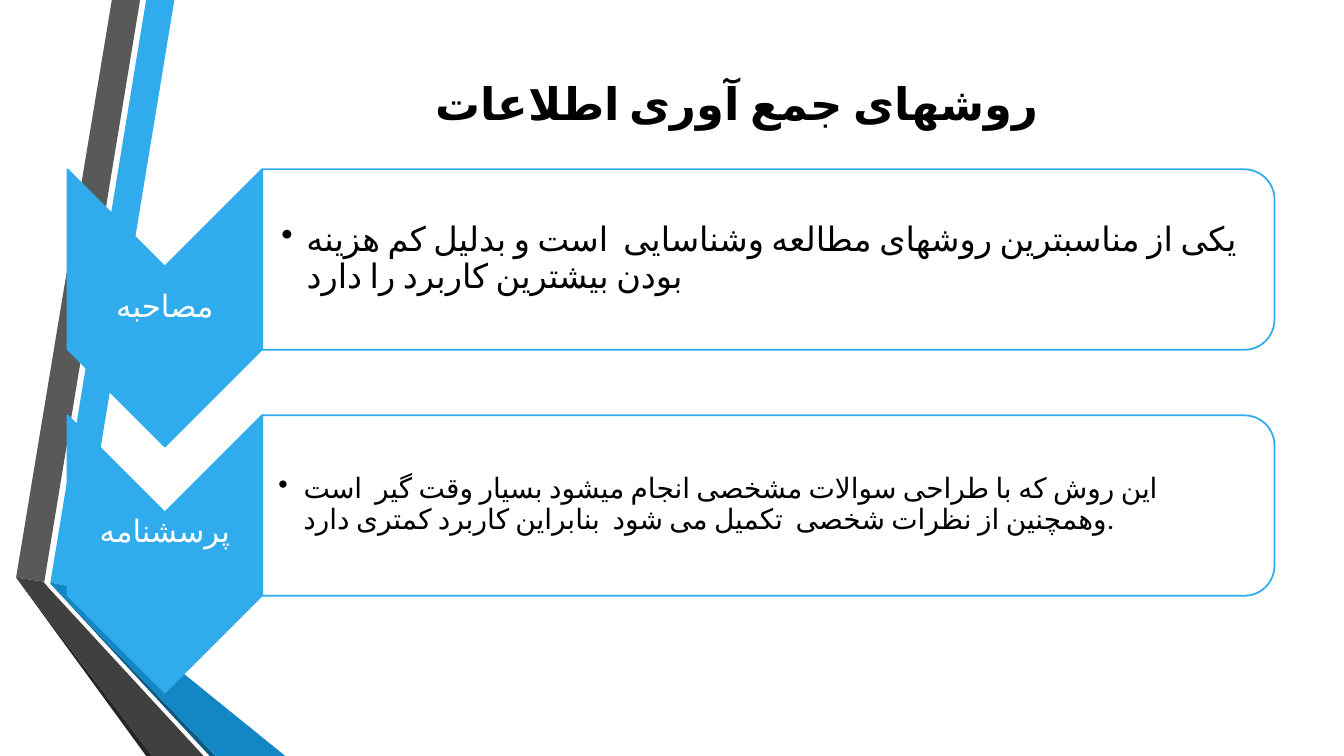
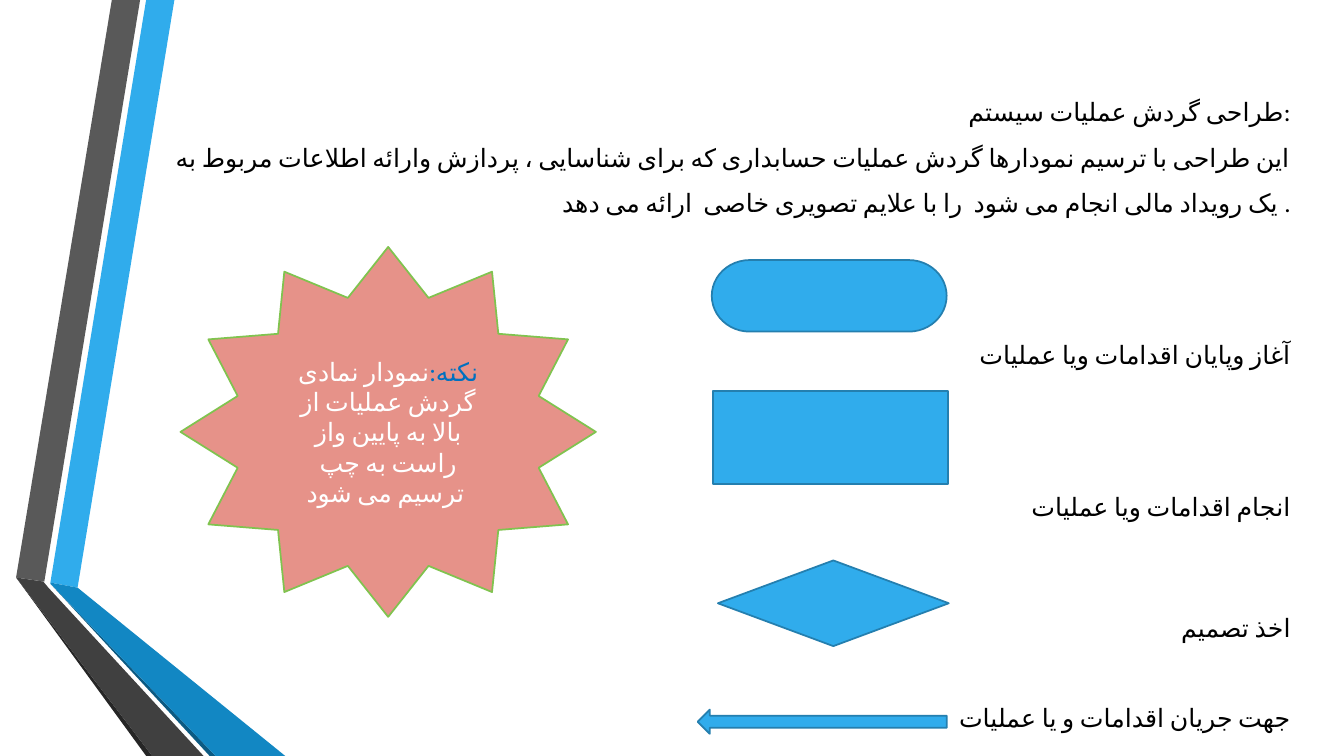
"""Build two slides on gathering data and drawing system flow."""
import pptx
import pptx.dml.color
import pptx.enum.lang
import pptx.enum.shapes
import pptx.enum.text
import pptx.oxml
import pptx.oxml.ns
import pptx.util

Inches = pptx.util.Inches
Pt = pptx.util.Pt
KIND = pptx.enum.shapes.MSO_SHAPE
ALIGN = pptx.enum.text.PP_ALIGN
ANCHOR = pptx.enum.text.MSO_ANCHOR
FONT = "Calibri"
SPACE = pptx.oxml.ns.nsdecls("a")

COLORS = {
    "blue": "30ACEC", "edge": "247FAF", "deep": "1287C3", "navy": "0C5A82",
    "gray": "595959", "dark": "404040", "coal": "262626",
    "white": "FFFFFF", "black": "000000",
    "rose": "E69289", "green": "80C34F", "note": "0070C0",
}

BANDS = [
    ("blue", [(0.5, 5.78), (0.77, 5.83), (1.73, 0), (1.45, 0)]),
    ("gray", [(1.39, 0), (1.11, 0), (0.16, 5.73), (0.44, 5.77)]),
    ("coal", [(0.16, 5.73), (1.45, 7.5), (1.51, 7.5)]),
    ("navy", [(0.5, 5.79), (2.08, 7.5), (2.14, 7.5)]),
    ("deep", [(0.5, 5.78), (0.5, 5.79), (2.14, 7.5), (2.83, 7.5), (0.77, 5.83)]),
    ("dark", [(2.02, 7.5), (0.48, 5.83), (0.43, 5.77), (0.16, 5.73), (1.51, 7.5)]),
]

METHODS = [
    ("مصاحبه", 0.96, 24, 0.19,
     "یکی از مناسبترین روشهای مطالعه وشناسایی  است و بدلیل کم هزینه بودن بیشترین کاربرد را دارد"),
    ("پرسشنامه", 0.75, 20, 0.16,
     "این روش که با طراحی سوالات مشخصی انجام میشود بسیار وقت گیر  است وهمچنین از نظرات شخصی  "
     "تکمیل می شود  بنابراین کاربرد کمتری دارد."),
]

SYMBOLS = [
    (KIND.FLOWCHART_TERMINATOR, (7.06, 2.58, 2.33, 0.71), 3.52, "آغاز وپایان اقدامات ویا عملیات"),
    (KIND.FLOWCHART_PROCESS, (7.07, 3.88, 2.33, 0.92), 5.02, "انجام اقدامات ویا عملیات"),
    (KIND.FLOWCHART_DECISION, (7.12, 5.56, 2.29, 0.85), 6.22, "اخذ تصمیم"),
    (KIND.LEFT_ARROW, (6.92, 7.04, 2.47, 0.24), 7.12, "جهت جریان اقدامات و یا عملیات"),
]


def color(name):
    """Return the named colour."""
    return pptx.dml.color.RGBColor.from_string(COLORS[name])


def paint(shape, fill, line=None):
    """Set a flat fill and an optional outline."""
    shape.shadow.inherit = False
    shape.fill.solid()
    shape.fill.fore_color.rgb = color(fill)
    if line:
        shape.line.color.rgb = color(line)
        shape.line.width = Pt(1.25)
    else:
        shape.line.fill.background()


def style(run, size, tint="black", bold=False):
    """Set the font of a run, for Persian script too."""
    run.font.name = FONT
    run.font.size = Pt(size)
    run.font.bold = bold
    run.font.color.rgb = color(tint)
    run.font.language_id = pptx.enum.lang.MSO_LANGUAGE_ID.FARSI
    run.font._rPr.append(pptx.oxml.parse_xml(f'<a:cs {SPACE} typeface="{FONT}"/>'))


def write(shape, text, size, tint="black", align=ALIGN.LEFT, anchor=ANCHOR.MIDDLE,
          space=1.0, bold=False):
    """Fill a shape with one paragraph and return the paragraph."""
    frame = shape.text_frame
    frame.text = text
    frame.word_wrap = True
    frame.auto_size = pptx.enum.text.MSO_AUTO_SIZE.NONE
    frame.vertical_anchor = anchor
    para = frame.paragraphs[0]
    para.alignment = align
    para.line_spacing = space
    style(para.runs[0], size, tint, bold)
    return para


def add_text(slide, box, text, size, **looks):
    """Add a text box and return it with its paragraph."""
    shape = slide.shapes.add_textbox(*map(Inches, box))
    return shape, write(shape, text, size, **looks)


def add_title(slide, box, text, size, **looks):
    """Move and format the title."""
    title = slide.shapes.title
    title.left, title.top, title.width, title.height = map(Inches, box)
    write(title, text, size, anchor=ANCHOR.TOP, **looks)


def add_form(slide, kind, box, fill, line):
    """Add a painted preset shape."""
    shape = slide.shapes.add_shape(kind, *map(Inches, box))
    paint(shape, fill, line)
    return shape


def add_turned(slide, kind, box, fill, line):
    """Add a shape turned by 90 degrees that covers the box."""
    left, top, width, height = box
    shift = (width - height) / 2
    shape = add_form(slide, kind, (left + shift, top - shift, height, width), fill, line)
    shape.rotation = 90
    return shape


def add_bands(deck, slide):
    """Draw the side bands and hand them to the slide master."""
    tree = deck.slide_master.shapes.element
    for order, (fill, points) in enumerate(BANDS):
        start, *rest = [tuple(map(Inches, point)) for point in points]
        pen = slide.shapes.build_freeform(*start, scale=1.0)
        pen.add_line_segments(rest, close=True)
        band = pen.convert_to_shape()
        paint(band, fill)
        band.element.xpath(".//p:cNvPr")[0].set("id", str(100 + order))
        tree.insert(2 + order, band.element)


def add_method(slide, left, top, label, drop, size, inset, text):
    """Draw a chevron with its label and the card beside it."""
    wide = 1.93
    add_turned(slide, KIND.CHEVRON, (left, top, wide, 2.75), "blue", "blue")
    add_text(slide, (left, top + drop, wide, 0.83), label, size=22, tint="white",
             align=ALIGN.CENTER, space=0.9)
    card = add_turned(slide, KIND.ROUND_2_SAME_RECTANGLE, (left + wide, top, 10.04, 1.79),
                      "white", "blue")
    tint = card.element.spPr.find(pptx.oxml.ns.qn("a:solidFill"))[0]
    tint.append(pptx.oxml.parse_xml(f'<a:alpha {SPACE} val="90000"/>'))
    body, para = add_text(slide, (left + wide, top + 0.08, 9.95, 1.62), text, size, space=0.9)
    body.text_frame.margin_left = Inches(inset)
    body.text_frame.margin_right = Inches(0.02)
    props = para._p.get_or_add_pPr()
    props.set("marL", str(Inches(0.25)))
    props.set("indent", str(Inches(-0.25)))
    props.append(pptx.oxml.parse_xml(f'<a:buChar {SPACE} char="•"/>'))


def add_symbol(slide, kind, box, middle, label):
    """Draw a flow symbol and its label on the right."""
    add_form(slide, kind, box, "blue", "edge")
    add_text(slide, (9.2, middle - 0.2, 3.7, 0.4), label, 18, align=ALIGN.RIGHT)


def add_star(slide, box):
    """Draw the star with the note."""
    star = add_form(slide, KIND.STAR_12_POINT, box, "rose", "green")
    para = write(star, "نکته:", 18, "note", ALIGN.CENTER)
    run = para.add_run()
    run.text = "نمودار نمادی گردش عملیات از بالا به پایین واز راست به چپ ترسیم می شود "
    style(run, 18, "white")


def fill_methods(slide):
    """Lay out the slide on methods."""
    for row, method in enumerate(METHODS):
        add_method(slide, 0.67, 1.68 + row * 2.44, *method)
    add_title(slide, (4.22, 0.7, 8.24, 0.64), "روشهای جمع آوری اطلاعات", 32, bold=True)


def fill_flow(slide):
    """Lay out the slide on flow symbols."""
    add_title(slide, (1.56, 0.76, 11.34, 0.55), "طراحی گردش عملیات سیستم:", 18,
              align=ALIGN.RIGHT, space=1.5)
    add_text(slide, (1.56, 1.21, 11.34, 1.0),
             "این طراحی با ترسیم نمودارها گردش عملیات حسابداری که برای شناسایی ، پردازش وارائه "
             "اطلاعات مربوط به یک رویداد مالی انجام می شود  را با علایم تصویری خاصی  ارائه می دهد .",
             18, align=ALIGN.RIGHT, anchor=ANCHOR.TOP, space=1.5)
    for symbol in SYMBOLS:
        add_symbol(slide, *symbol)
    add_star(slide, (1.79, 2.45, 4.12, 3.67))


def main():
    """Build and save the deck."""
    deck = pptx.Presentation()
    deck.slide_width, deck.slide_height = Inches(13.33), Inches(7.5)
    first, second = [deck.slides.add_slide(deck.slide_layouts[5]) for _ in range(2)]
    add_bands(deck, first)
    fill_methods(first)
    fill_flow(second)
    deck.save("out.pptx")


if __name__ == "__main__":
    main()
